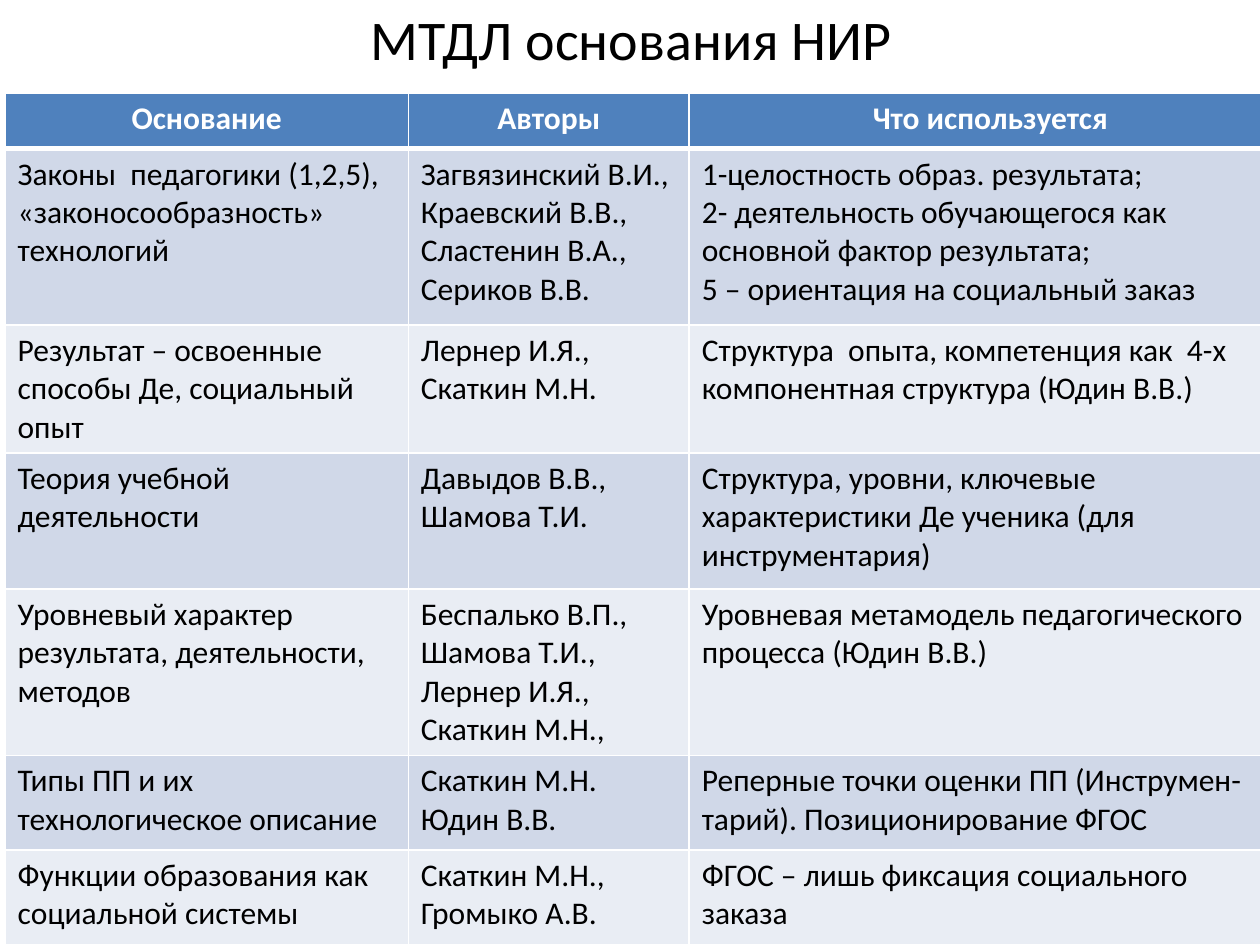
from lxml import etree
from pptx import Presentation
from pptx import util as u
from pptx.dml.color import RGBColor
from pptx.enum import text
from pptx.oxml.ns import qn

BLACK = RGBColor(0x00, 0x00, 0x00)
WHITE = RGBColor(0xFF, 0xFF, 0xFF)
HEADER_BLUE = RGBColor(0x4F, 0x81, 0xBD)
BANDS = (RGBColor(0xD0, 0xD8, 0xE8), RGBColor(0xE9, 0xED, 0xF4))

# Shares of the slide's width and height, in percent
COLUMNS = (32, 22.3, 47.8)
ROWS = (5.87, 18.67, 13.33, 14.4, 17.07, 10, 10)

HEADER = ("Основание", "Авторы", "Что используется")
FOUNDATIONS = (
    ("Законы  педагогики (1,2,5), «законосообразность» технологий",
     "Загвязинский В.И., Краевский В.В., Сластенин В.А., Сериков В.В.",
     "1-целостность образ. результата;\n"
     "2- деятельность обучающегося как основной фактор результата;\n"
     "5 – ориентация на социальный заказ"),
    ("Результат – освоенные способы Де, социальный опыт",
     "Лернер И.Я., Скаткин М.Н.",
     "Структура  опыта, компетенция как  4-х компонентная структура (Юдин В.В.)"),
    ("Теория учебной деятельности",
     "Давыдов В.В., Шамова Т.И.",
     "Структура, уровни, ключевые характеристики Де ученика (для инструментария)"),
    ("Уровневый характер  результата, деятельности, методов",
     "Беспалько В.П., Шамова Т.И., Лернер И.Я., Скаткин М.Н.,",
     "Уровневая метамодель педагогического процесса (Юдин В.В.)"),
    ("Типы ПП и их технологическое описание",
     "Скаткин М.Н.\nЮдин В.В.",
     "Реперные точки оценки ПП (Инструмен-тарий). Позиционирование ФГОС"),
    ("Функции образования как социальной системы",
     "Скаткин М.Н., Громыко А.В.",
     "ФГОС – лишь фиксация социального заказа"),
)


class SlideBuilder:
    font = "Calibri"

    def __init__(self, deck):
        self.deck = deck
        self.page = deck.slides.add_slide(deck.slide_layouts[5])

    def across(self, percent):
        return u.Emu(round(self.deck.slide_width * percent / 100))

    def down(self, percent):
        return u.Emu(round(self.deck.slide_height * percent / 100))

    def set_words(self, frame, words, size, color, bold=False, align=None):
        frame.text = words
        for para in frame.paragraphs:
            para.alignment = align
            for span in para.runs:
                span.font.name = self.font
                span.font.size = u.Pt(size)
                span.font.bold = bold
                span.font.color.rgb = color

    def title(self, words, left, top, width, height):
        box = self.page.shapes.title
        box.left, box.top = self.across(left), self.down(top)
        box.width, box.height = self.across(width), self.down(height)
        self.set_words(box.text_frame, words, 32, BLACK,
                       align=text.PP_ALIGN.CENTER)
        box.text_frame.vertical_anchor = text.MSO_ANCHOR.MIDDLE

    def borders(self, cell, bottom):
        """Draw white cell borders: one point, with a chosen bottom width."""
        properties = cell._tc.get_or_add_tcPr()
        widths = (("a:lnL", 1), ("a:lnR", 1), ("a:lnT", 1), ("a:lnB", bottom))
        for place, (tag, points) in enumerate(widths):
            line = etree.Element(qn(tag), w=str(u.Pt(points)))
            fill = etree.SubElement(line, qn("a:solidFill"))
            etree.SubElement(fill, qn("a:srgbClr"), val=str(WHITE))
            properties.insert(place, line)

    def table(self, records, left, top, columns, rows):
        frame = self.page.shapes.add_table(
            len(rows), len(columns), self.across(left), self.down(top),
            self.across(sum(columns)), self.down(sum(rows)))
        grid = frame.table
        for column, share in zip(grid.columns, columns):
            column.width = self.across(share)
        for index, (row, share, record) in enumerate(zip(grid.rows, rows, records)):
            row.height = self.down(share)
            is_header = index == 0
            for cell, words in zip(row.cells, record):
                cell.fill.solid()
                if is_header:
                    cell.fill.fore_color.rgb = HEADER_BLUE
                    self.set_words(cell.text_frame, words, 18, WHITE, True,
                                   text.PP_ALIGN.CENTER)
                else:
                    cell.fill.fore_color.rgb = BANDS[(index - 1) % 2]
                    self.set_words(cell.text_frame, words, 18, BLACK)
                self.borders(cell, bottom=3 if is_header else 1)


def main():
    deck = Presentation()
    deck.slide_width, deck.slide_height = u.Inches(10), u.Inches(7.5)
    slide = SlideBuilder(deck)
    slide.title("МТДЛ основания НИР", left=5.1, top=0, width=90, height=8.13)
    slide.table((HEADER, *FOUNDATIONS), left=0.4, top=9.87,
                columns=COLUMNS, rows=ROWS)
    deck.save("out.pptx")


if __name__ == "__main__":
    main()
